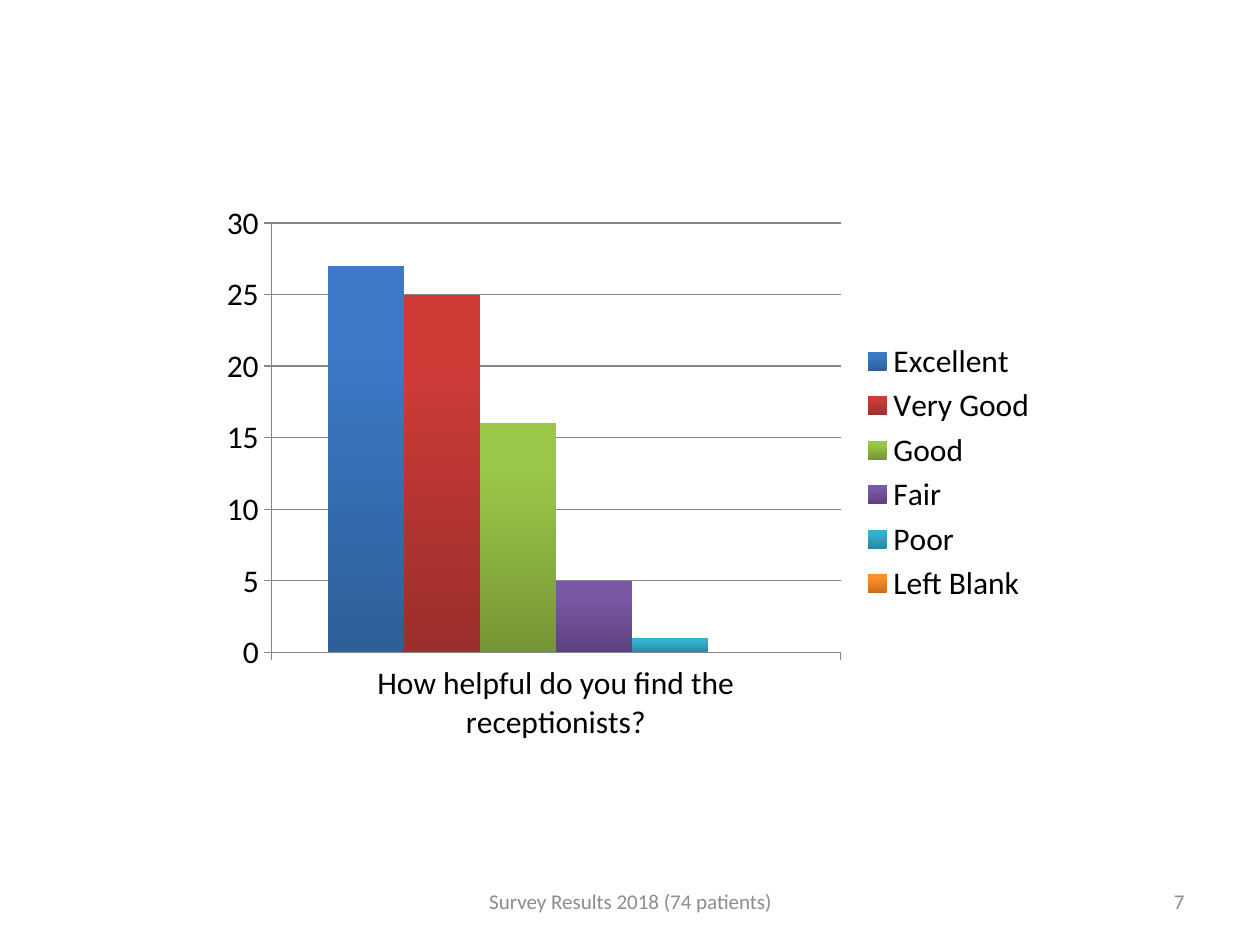
from pptx import Presentation
from pptx import util as u
from pptx.chart.data import CategoryChartData
from pptx.dml.color import RGBColor
from pptx.enum import chart as charts, text

FONT = "Calibri"
QUESTION = "How helpful do you find the receptionists?"
# Answer, number of patients, bar colour at the foot and at the top
ANSWERS = [
    ("Excellent", 27, "2E5F99", "3C7AC7"),
    ("Very Good", 25, "9B2F2C", "CE3B37"),
    ("Good", 16, "769535", "9BC748"),
    ("Fair", 5, "5D417E", "7B58A6"),
    ("Poor", 1, "2787A0", "36B1D2"),
    ("Left Blank", 0, "CB6C1D", "FF8F2A"),
]


def colour(value):
    return RGBColor.from_string(value)


def apply(target, values):
    for name, value in values.items():
        setattr(target, name, value)


def style_font(font, size, value):
    apply(font, {"name": FONT, "size": u.Pt(size)})
    font.color.rgb = colour(value)


def share(presentation, left, top, width, height):
    """Turn shares of the slide's size into a box."""
    across, down = presentation.slide_width, presentation.slide_height
    return [int(part) for part in
            (left * across, top * down, width * across, height * down)]


def add_answer_chart(slide, box):
    data = CategoryChartData()
    data.categories = [QUESTION]
    for name, count, _, _ in ANSWERS:
        data.add_series(name, [count])
    chart = slide.shapes.add_chart(
        charts.XL_CHART_TYPE.COLUMN_CLUSTERED, *box, data).chart
    style_font(chart.font, 18, "000000")
    apply(chart, {"has_title": False, "has_legend": True})
    apply(chart.legend, {"position": charts.XL_LEGEND_POSITION.RIGHT,
                         "include_in_layout": False})

    # Axes and gridlines
    value_axis, category_axis = chart.value_axis, chart.category_axis
    apply(value_axis, {"minimum_scale": 0, "maximum_scale": 30,
                       "major_unit": 5, "has_major_gridlines": True})
    for axis in (value_axis, category_axis):
        axis.major_tick_mark = charts.XL_TICK_MARK.OUTSIDE
    for part in (value_axis, category_axis, value_axis.major_gridlines):
        part.format.line.color.rgb = colour("868686")
        part.format.line.width = u.Pt(0.75)

    # Bars, shaded from foot to top
    plot = chart.plots[0]
    apply(plot, {"gap_width": 150, "overlap": 0, "vary_by_categories": False})
    for series, (_, _, foot, top) in zip(plot.series, ANSWERS):
        fill = series.format.fill
        fill.gradient()
        fill.gradient_angle = 90
        for stop, value, position in zip(fill.gradient_stops, (foot, top), (0, 0.8)):
            stop.color.rgb = colour(value)
            stop.position = position


def add_footer_text(slide, box, words, alignment):
    frame = slide.shapes.add_textbox(*box).text_frame
    apply(frame, {"word_wrap": True, "vertical_anchor": text.MSO_ANCHOR.MIDDLE})
    paragraph = frame.paragraphs[0]
    apply(paragraph, {"text": words, "alignment": alignment})
    style_font(paragraph.runs[0].font, 12, "8C8C8C")


def main():
    presentation = Presentation()
    apply(presentation, {"slide_width": u.Inches(10), "slide_height": u.Inches(7.5)})
    slide = presentation.slides.add_slide(presentation.slide_layouts[6])

    # Chart, one sixth of the slide in from each side
    add_answer_chart(slide, share(presentation, 1 / 6, 0.204, 2 / 3, 0.592))

    # Footer row: page number and survey name
    row_top, row_height = 0.927, 0.053
    for left, width, words, alignment in (
        (0.717, 0.233, "7", text.PP_ALIGN.RIGHT),
        (0.342, 0.317, "Survey Results 2018 (74 patients)", text.PP_ALIGN.CENTER),
    ):
        box = share(presentation, left, row_top, width, row_height)
        add_footer_text(slide, box, words, alignment)

    presentation.save("out.pptx")


if __name__ == "__main__":
    main()
